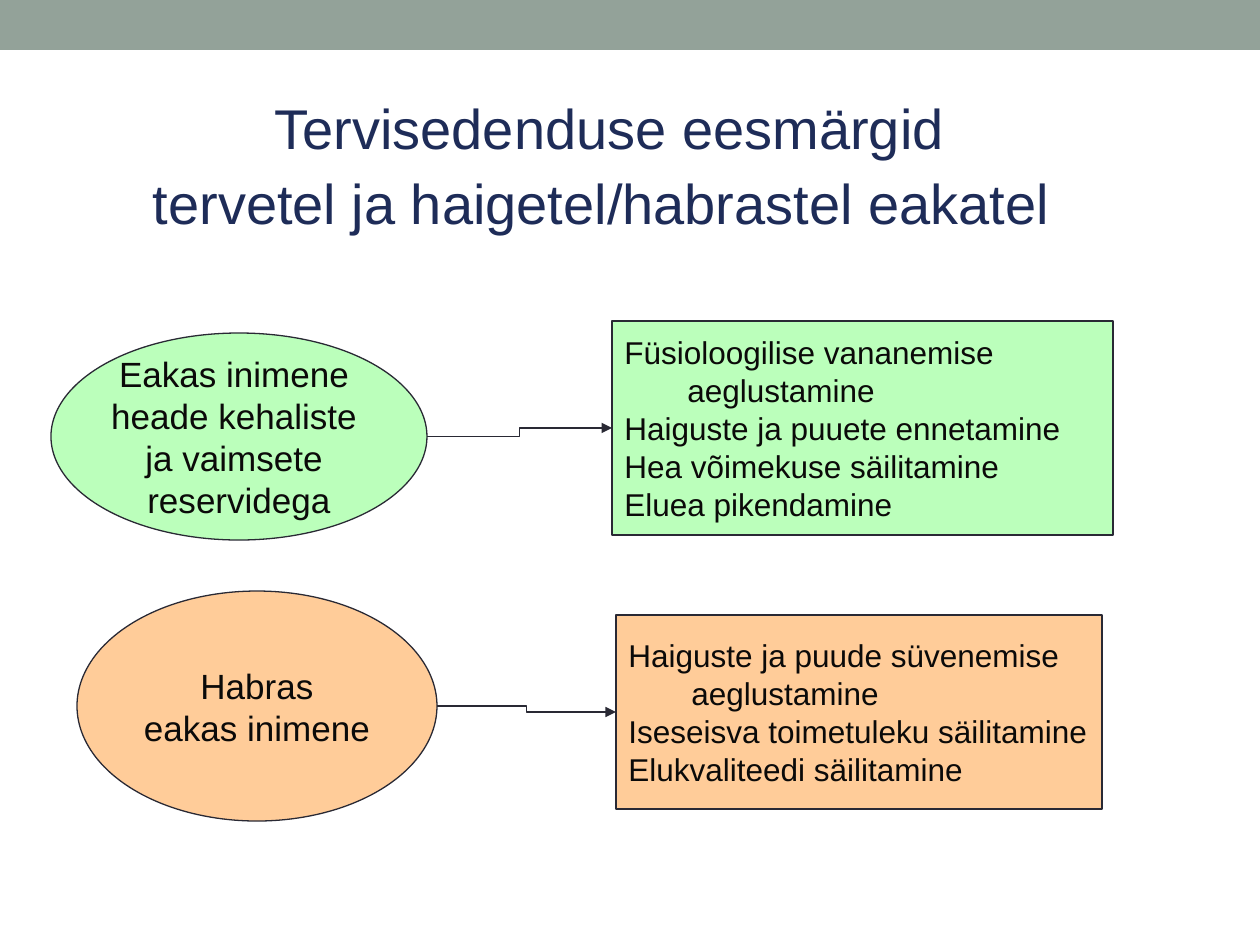
import pptx
import pptx.util
import pptx.dml.color
import pptx.enum.shapes
import pptx.enum.text
import pptx.oxml

SCALE = 914400 / 126  # EMU in one px
COLORS = {
    "band": "93A299",
    "title": "1E2C58",
    "line": "292934",
    "text": "0B0A09",
    "healthy": "BBFFBB",
    "frail": "FFCC99",
}
SHAPE = pptx.enum.shapes.MSO_SHAPE
ALIGN = pptx.enum.text.PP_ALIGN
ANCHOR = pptx.enum.text.MSO_ANCHOR


def px(n):
    return pptx.util.Emu(round(n * SCALE))


def rgb(name):
    return pptx.dml.color.RGBColor.from_string(COLORS[name])


def add_run(p, text, size, color, font="Arial", bold=False):
    r = p.add_run()
    r.text = text
    r.font.size = pptx.util.Pt(size)
    r.font.name = font
    r.font.bold = bold
    r.font.color.rgb = rgb(color)


def add_filled(s, kind, box, fill):
    sp = s.shapes.add_shape(kind, *map(px, box))
    sp.shadow.inherit = False
    sp.fill.solid()
    sp.fill.fore_color.rgb = rgb(fill)
    sp.line.fill.background()
    return sp


def add_node(s, kind, box, fill, lines, size, align):
    """Outlined shape with one paragraph per line of text."""
    sp = add_filled(s, kind, box, fill)
    sp.line.color.rgb = rgb("line")
    sp.line.width = pptx.util.Pt(0.75)
    tf = sp.text_frame
    tf.word_wrap = False
    tf.vertical_anchor = ANCHOR.MIDDLE
    for i, line in enumerate(lines):
        p = tf.add_paragraph() if i else tf.paragraphs[0]
        p.alignment = align
        for j, part in enumerate(line.split("\t")):
            add_run(p, "\t" + part if j else part, size, "text")
    return sp


def add_arrow(s, person, goals):
    """Elbow arrow from the right of the ellipse to the left of the box."""
    c = s.shapes.add_connector(
        pptx.enum.shapes.MSO_CONNECTOR.ELBOW,
        person.left + person.width, person.top + person.height // 2,
        goals.left, goals.top + goals.height // 2)
    c.end_connect(goals, 1)
    c.line.color.rgb = rgb("line")
    c.line.width = pptx.util.Pt(0.75)
    ns = pptx.oxml.ns.qn
    ln = c.line._get_or_add_ln()
    ln.append(ln.makeelement(ns("a:tailEnd"), {"type": "triangle"}))
    sp_pr = ln.getparent()
    sp_pr.append(sp_pr.makeelement(ns("a:effectLst"), {}))


def add_title(s, box, lines):
    sp = s.shapes.title
    sp.left, sp.top, sp.width, sp.height = map(px, box)
    tf = sp.text_frame
    tf.word_wrap = True
    tf.auto_size = pptx.enum.text.MSO_AUTO_SIZE.NONE
    tf.vertical_anchor = ANCHOR.BOTTOM
    p = tf.paragraphs[0]
    p.alignment = ALIGN.CENTER
    for i, line in enumerate(lines):
        if i:
            p.add_line_break()
        add_run(p, line, 32, "title")
    add_run(p, " ", 36, "title", "Times New Roman", True)


def add_goal_row(s, fill, person_box, person, goals_box, goals):
    ellipse = add_node(s, SHAPE.OVAL, person_box, fill, person, 20, ALIGN.CENTER)
    rect = add_node(s, SHAPE.RECTANGLE, goals_box, fill, goals, 18, ALIGN.LEFT)
    add_arrow(s, ellipse, rect)


def main():
    prs = pptx.Presentation()
    prs.slide_width, prs.slide_height = px(1260), px(945)
    s = prs.slides.add_slide(prs.slide_layouts[5])

    add_filled(s, SHAPE.RECTANGLE, (0, 0, 1260, 50), "band")
    add_title(s, (74, 86, 1071, 157),
              ["Tervisedenduse eesmärgid", "tervetel ja haigetel/habrastel eakatel"])
    add_goal_row(
        s, "healthy",
        (51, 333, 376, 207),
        ["Eakas inimene ", "heade kehaliste ", "ja vaimsete ", "reservidega"],
        (612, 321, 501, 214),
        ["Füsioloogilise vananemise", "\taeglustamine", "Haiguste ja puuete ennetamine",
         "Hea võimekuse säilitamine", "Eluea pikendamine"])
    add_goal_row(
        s, "frail",
        (77, 591, 360, 230),
        ["Habras", "eakas inimene"],
        (616, 615, 486, 194),
        ["Haiguste ja puude süvenemise", " \taeglustamine",
         "Iseseisva toimetuleku säilitamine", "Elukvaliteedi säilitamine"])
    prs.save("out.pptx")


if __name__ == "__main__":
    main()
